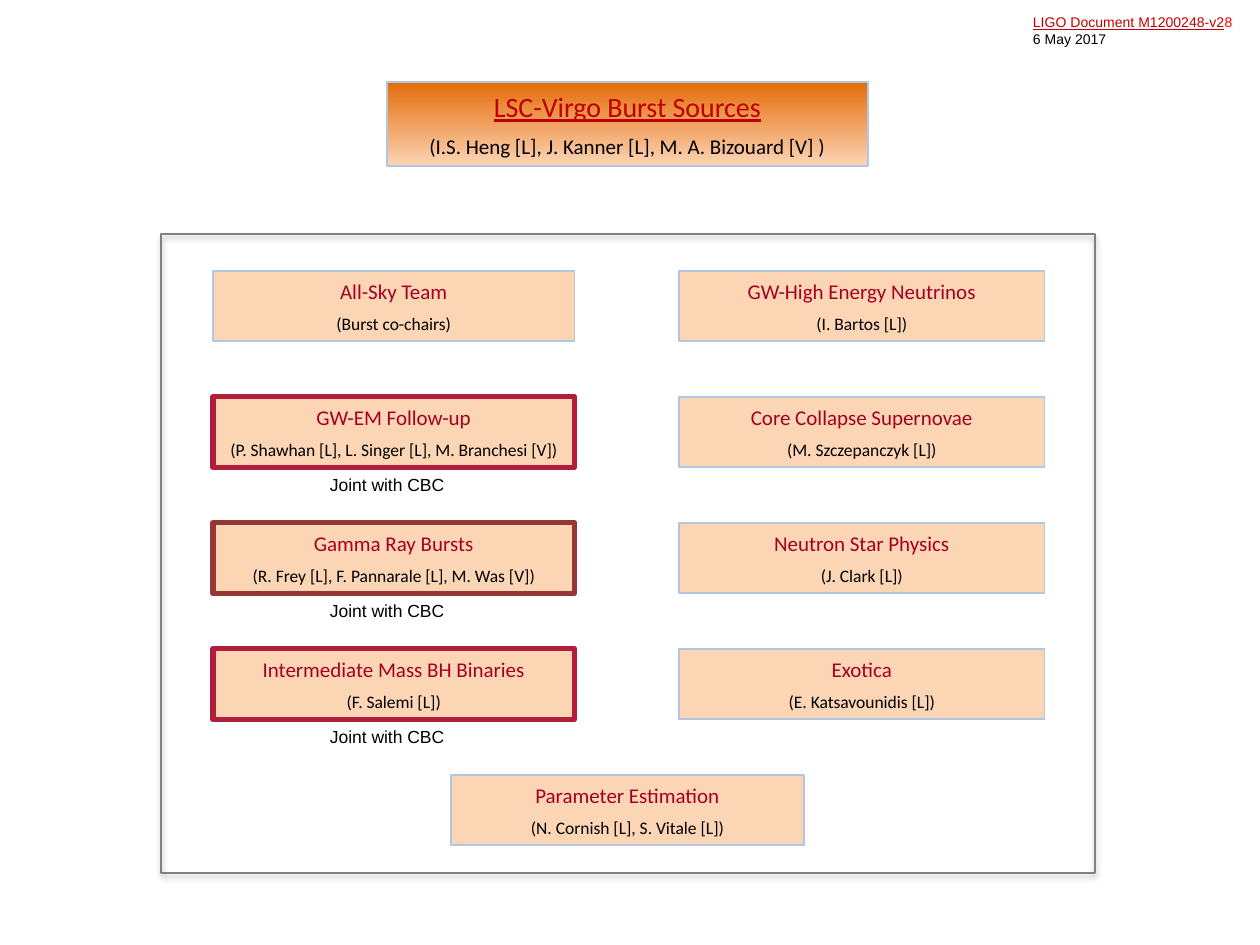
from typing import NamedTuple
from lxml.etree import SubElement as Sub
from pptx import Presentation
from pptx.dml.color import RGBColor as Rgb
from pptx.enum.shapes import MSO_SHAPE as Kind
from pptx.enum.text import MSO_ANCHOR as Anchor, MSO_AUTO_SIZE as Fit, PP_ALIGN as Align
from pptx.oxml.ns import qn
from pptx.util import Inches, Pt

BLACK = Rgb(0x00, 0x00, 0x00)
RED = Rgb(0xFF, 0x00, 0x00)
DEEP = Rgb(0xC0, 0x00, 0x00)
WINE = Rgb(0xA5, 0x00, 0x21)
ROSE = Rgb(0xB0, 0x1E, 0x3B)
BRICK = Rgb(0x95, 0x37, 0x35)
PEACH = Rgb(0xFC, 0xD5, 0xB5)
ORANGE = Rgb(0xE4, 0x6C, 0x0A)
BLUE = Rgb(0xB0, 0xC6, 0xE1)
GRAY = Rgb(0x80, 0x80, 0x80)

WIDE, HIGH = 10, 7.5
TOP, STEP, TALL = 2.15, 1, 0.56


class Area(NamedTuple):
    x: float
    y: float
    w: float
    h: float

    def lengths(self) -> list:
        return [Inches(v) for v in self]


class Col(NamedTuple):
    x: float
    w: float

    def cell(self, row: int) -> Area:
        return Area(self.x, TOP + row * STEP, self.w, TALL)


class Team(NamedTuple):
    col: Col
    row: int
    name: str
    chairs: str
    edge: Rgb = BLUE
    joint: bool = False


LEFT, RIGHT, MID = Col(1.69, 2.87), Col(5.39, 2.9), Col(3.58, 2.8)

TEAMS = [
    Team(LEFT, 0, "All-Sky Team", "(Burst co-chairs)"),
    Team(LEFT, 1, "GW-EM Follow-up",
         "(P. Shawhan [L], L. Singer [L], M. Branchesi [V])", ROSE, True),
    Team(LEFT, 2, "Gamma Ray Bursts",
         "(R. Frey [L], F. Pannarale [L], M. Was [V])", BRICK, True),
    Team(LEFT, 3, "Intermediate Mass BH Binaries", "(F. Salemi [L])", ROSE, True),
    Team(RIGHT, 0, "GW-High Energy Neutrinos", "(I. Bartos [L])"),
    Team(RIGHT, 1, "Core Collapse Supernovae", "(M. Szczepanczyk [L])"),
    Team(RIGHT, 2, "Neutron Star Physics", "(J. Clark [L])"),
    Team(RIGHT, 3, "Exotica", "(E. Katsavounidis [L])"),
    Team(MID, 4, "Parameter Estimation", "(N. Cornish [L], S. Vitale [L])"),
]


def write(par, text: str, *, size: float, font: str = "Calibri", color: Rgb = BLACK,
          line: bool = False, align: Align = Align.LEFT, gap: float = 0) -> None:
    par.alignment = align
    par.space_before = Pt(gap)
    run = par.add_run()
    run.text = text
    run.font.size = Pt(size)
    run.font.name = font
    run.font.color.rgb = color
    run.font.underline = line


def edge(shape, color: Rgb, width: float) -> None:
    shape.line.color.rgb = color
    shape.line.width = Pt(width)


def rect(slide, area: Area):
    shape = slide.shapes.add_shape(Kind.RECTANGLE, *area.lengths())
    shape.shadow.inherit = False
    return shape


def fill_in(shape, name: str, chairs: str, *, big: float, small: float,
            color: Rgb, line: bool = False) -> None:
    frame = shape.text_frame
    frame.word_wrap = True
    frame.auto_size = Fit.NONE
    frame.vertical_anchor = Anchor.MIDDLE
    write(frame.paragraphs[0], name, size=big, color=color, line=line,
          align=Align.CENTER)
    write(frame.add_paragraph(), chairs, size=small, align=Align.CENTER, gap=small / 2)


def note(slide, area: Area, wrap: bool):
    frame = slide.shapes.add_textbox(*area.lengths()).text_frame
    frame.word_wrap = wrap
    return frame


def draw_head(slide) -> None:
    frame = note(slide, Area(0.81 * WIDE, 0.06, 1.84, 0.37), True)
    first = frame.paragraphs[0]
    write(first, "LIGO Document M1200248-v2", size=8, font="Arial", color=DEEP, line=True)
    write(first, "8", size=8, font="Arial", color=RED)
    write(frame.add_paragraph(), "6 May 2017", size=8, font="Arial")


def draw_title(slide) -> None:
    title = slide.shapes.title
    title.left, title.top, title.width, title.height = Area(3.07, 0.65, 3.82, 0.67).lengths()
    title.fill.gradient()
    title.fill.gradient_angle = 270
    for stop, color in zip(title.fill.gradient_stops, (ORANGE, PEACH)):
        stop.color.rgb = color
    edge(title, BLUE, 1)
    fill_in(title, "LSC-Virgo Burst Sources",
            "(I.S. Heng [L], J. Kanner [L], M. A. Bizouard [V] )",
            big=16, small=12, color=DEEP, line=True)


def draw_frame(slide) -> None:
    shape = rect(slide, Area(1.28, 1.86, 7.41, 5.07))
    shape.fill.background()
    edge(shape, GRAY, 1)
    effects = shape._element.spPr.find(qn("a:effectLst"))
    shade = Sub(effects, qn("a:outerShdw"), blurRad=str(Pt(3.1)), dist=str(Pt(1.8)),
                dir="5400000", rotWithShape="0")
    tint = Sub(shade, qn("a:srgbClr"), val=str(BLACK))
    Sub(tint, qn("a:alpha"), val="35000")


def draw_team(slide, team: Team) -> None:
    area = team.col.cell(team.row)
    shape = rect(slide, area)
    shape.fill.solid()
    shape.fill.fore_color.rgb = PEACH
    edge(shape, team.edge, 3 if team.joint else 1)
    fill_in(shape, team.name, team.chairs, big=12, small=10, color=WINE)
    if team.joint:
        frame = note(slide, Area(2.52, area.y + TALL, 1.16, 0.27), False)
        write(frame.paragraphs[0], "Joint with CBC", size=10, font="Arial")


def main() -> None:
    deck = Presentation()
    deck.slide_width, deck.slide_height = Inches(WIDE), Inches(HIGH)
    slide = deck.slides.add_slide(deck.slide_layouts[5])
    draw_head(slide)
    draw_title(slide)
    draw_frame(slide)
    for team in TEAMS:
        draw_team(slide, team)
    deck.save("out.pptx")


if __name__ == "__main__":
    main()
